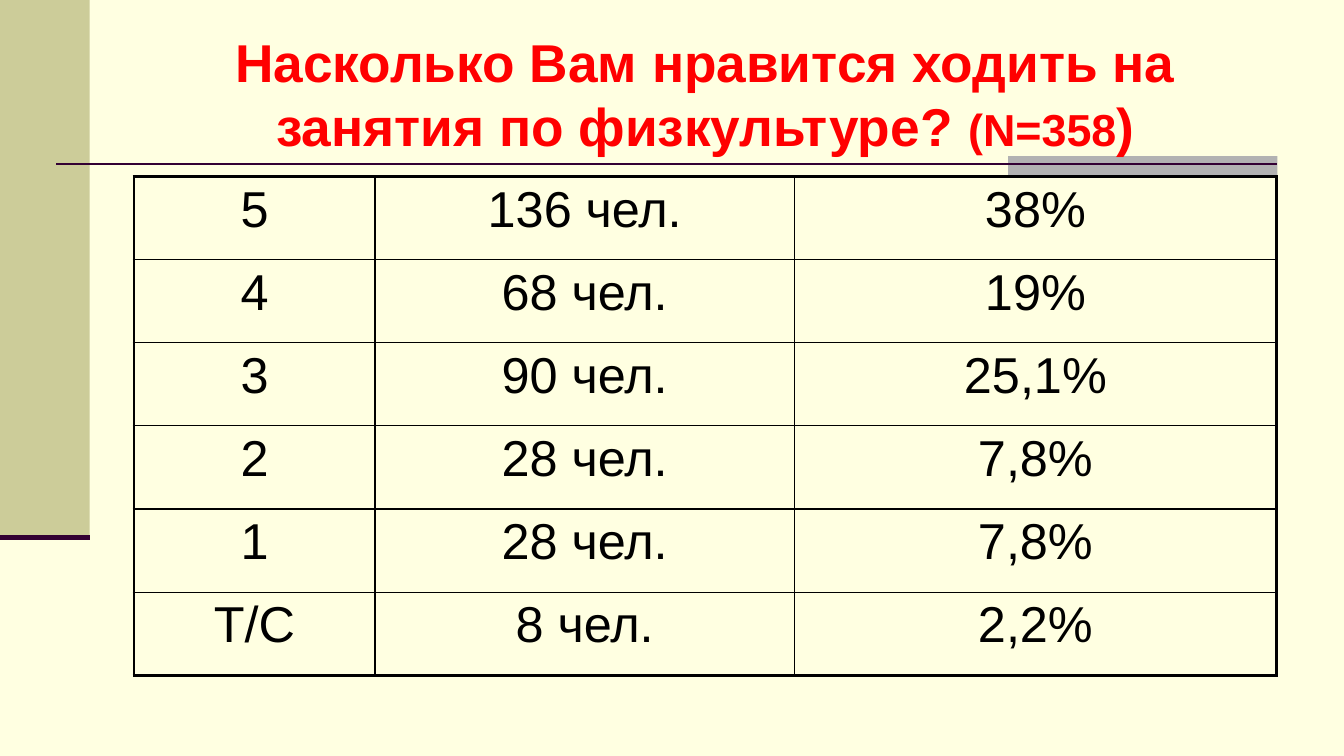
"""Builds a slide with survey answers on how much pupils like PE lessons."""
from dataclasses import dataclass

from lxml import etree
from pptx import Presentation, util as u
from pptx.dml.color import RGBColor
from pptx.enum import shapes, text
from pptx.oxml import ns

CREAM = RGBColor(0xFF, 0xFF, 0xE1)
OLIVE = RGBColor(0xCC, 0xCC, 0x99)
GRAY = RGBColor(0xB2, 0xB2, 0xB2)
PLUM = RGBColor(0x33, 0x00, 0x33)
RED = RGBColor(0xFF, 0x00, 0x00)
BLACK = RGBColor(0x00, 0x00, 0x00)

FONT = "Arial"
OUTER_BORDER = 2.25
INNER_BORDER = 1


@dataclass(frozen=True)
class Block:
    left: float
    top: float
    width: float
    height: float
    color: RGBColor


@dataclass(frozen=True)
class Rule:
    left: float
    right: float
    top: float
    weight: float


@dataclass(frozen=True)
class TitlePart:
    wording: str
    size: float


@dataclass(frozen=True)
class Answer:
    score: str
    people: str
    share: str


BLOCKS = [Block(0, 0, 0.89, 5.33, OLIVE), Block(10, 1.55, 2.67, 0.2, GRAY)]
RULES = [Rule(0.56, 12.67, 1.63, 1.5), Rule(0, 0.89, 5.33, 3.5)]
TITLE = [
    TitlePart("Насколько Вам нравится ходить на занятия по физкультуре? ", 38),
    TitlePart("(N=358", 32),
    TitlePart(")", 38),
]
ANSWERS = [
    Answer("5", "136 чел.", "38%"),
    Answer("4", "68 чел.", "19%"),
    Answer("3", "90 чел.", "25,1%"),
    Answer("2", "28 чел.", "7,8%"),
    Answer("1", "28 чел.", "7,8%"),
    Answer("Т/С", "8 чел.", "2,2%"),
]
COLUMN_WIDTHS = [2.39, 4.16, 4.78]
TABLE_HEIGHT = 4.95


def add_block(slide, block: Block) -> None:
    shape = slide.shapes.add_shape(
        shapes.MSO_SHAPE.RECTANGLE, u.Inches(block.left), u.Inches(block.top),
        u.Inches(block.width), u.Inches(block.height))
    shape.shadow.inherit = False
    shape.fill.solid()
    shape.fill.fore_color.rgb = block.color
    shape.line.fill.background()


def add_rule(slide, rule: Rule) -> None:
    connector = slide.shapes.add_connector(
        shapes.MSO_CONNECTOR.STRAIGHT, u.Inches(rule.left), u.Inches(rule.top),
        u.Inches(rule.right), u.Inches(rule.top))
    connector.line.color.rgb = PLUM
    connector.line.width = u.Pt(rule.weight)
    etree.SubElement(connector._element.spPr, ns.qn("a:effectLst"))


def add_run(paragraph, wording: str, size: float, color: RGBColor, bold: bool) -> None:
    run = paragraph.add_run()
    run.text = wording
    run.font.name = FONT
    run.font.size = u.Pt(size)
    run.font.bold = bold
    run.font.color.rgb = color


def add_title(slide, parts: list[TitlePart]) -> None:
    box = slide.shapes.add_textbox(
        u.Inches(1.33), u.Inches(0.3), u.Inches(11.33), u.Inches(1.25))
    frame = box.text_frame
    frame.word_wrap = True
    frame.vertical_anchor = text.MSO_ANCHOR.MIDDLE
    paragraph = frame.paragraphs[0]
    paragraph.alignment = text.PP_ALIGN.CENTER
    for part in parts:
        add_run(paragraph, part.wording, part.size, RED, True)


def set_borders(cell, weights: dict[str, float]) -> None:
    properties = cell._tc.get_or_add_tcPr()
    for side, weight in weights.items():
        line = etree.SubElement(properties, ns.qn(f"a:ln{side}"), w=str(u.Pt(weight)))
        fill = etree.SubElement(line, ns.qn("a:solidFill"))
        etree.SubElement(fill, ns.qn("a:srgbClr"), val=str(BLACK))


def set_relative_space_before(paragraph, percent: int) -> None:
    spacing = etree.SubElement(paragraph._p.get_or_add_pPr(), ns.qn("a:spcBef"))
    etree.SubElement(spacing, ns.qn("a:spcPct"), val=str(percent * 1000))


def add_answers(slide, answers: list[Answer]) -> None:
    row_count, column_count = len(answers), len(COLUMN_WIDTHS)
    table = slide.shapes.add_table(
        row_count, column_count, u.Inches(1.33), u.Inches(1.75),
        u.Inches(sum(COLUMN_WIDTHS)), u.Inches(TABLE_HEIGHT)).table
    table.first_row = False
    table.horz_banding = False
    for column, width in zip(table.columns, COLUMN_WIDTHS):
        column.width = u.Inches(width)
    for row, answer in enumerate(answers):
        for column, wording in enumerate((answer.score, answer.people, answer.share)):
            cell = table.cell(row, column)
            at_edge = {
                "L": column == 0,
                "R": column == column_count - 1,
                "T": row == 0,
                "B": row == row_count - 1,
            }
            set_borders(cell, {side: OUTER_BORDER if edge else INNER_BORDER
                               for side, edge in at_edge.items()})
            cell.fill.background()
            paragraph = cell.text_frame.paragraphs[0]
            paragraph.alignment = text.PP_ALIGN.CENTER
            set_relative_space_before(paragraph, 20)
            add_run(paragraph, wording, 36, BLACK, False)


def main() -> None:
    presentation = Presentation()
    presentation.slide_width = u.Inches(13.33)
    presentation.slide_height = u.Inches(7.5)
    slide = presentation.slides.add_slide(presentation.slide_layouts[6])
    slide.background.fill.solid()
    slide.background.fill.fore_color.rgb = CREAM
    for block in BLOCKS:
        add_block(slide, block)
    for rule in RULES:
        add_rule(slide, rule)
    add_title(slide, TITLE)
    add_answers(slide, ANSWERS)
    presentation.save("out.pptx")


if __name__ == "__main__":
    main()
